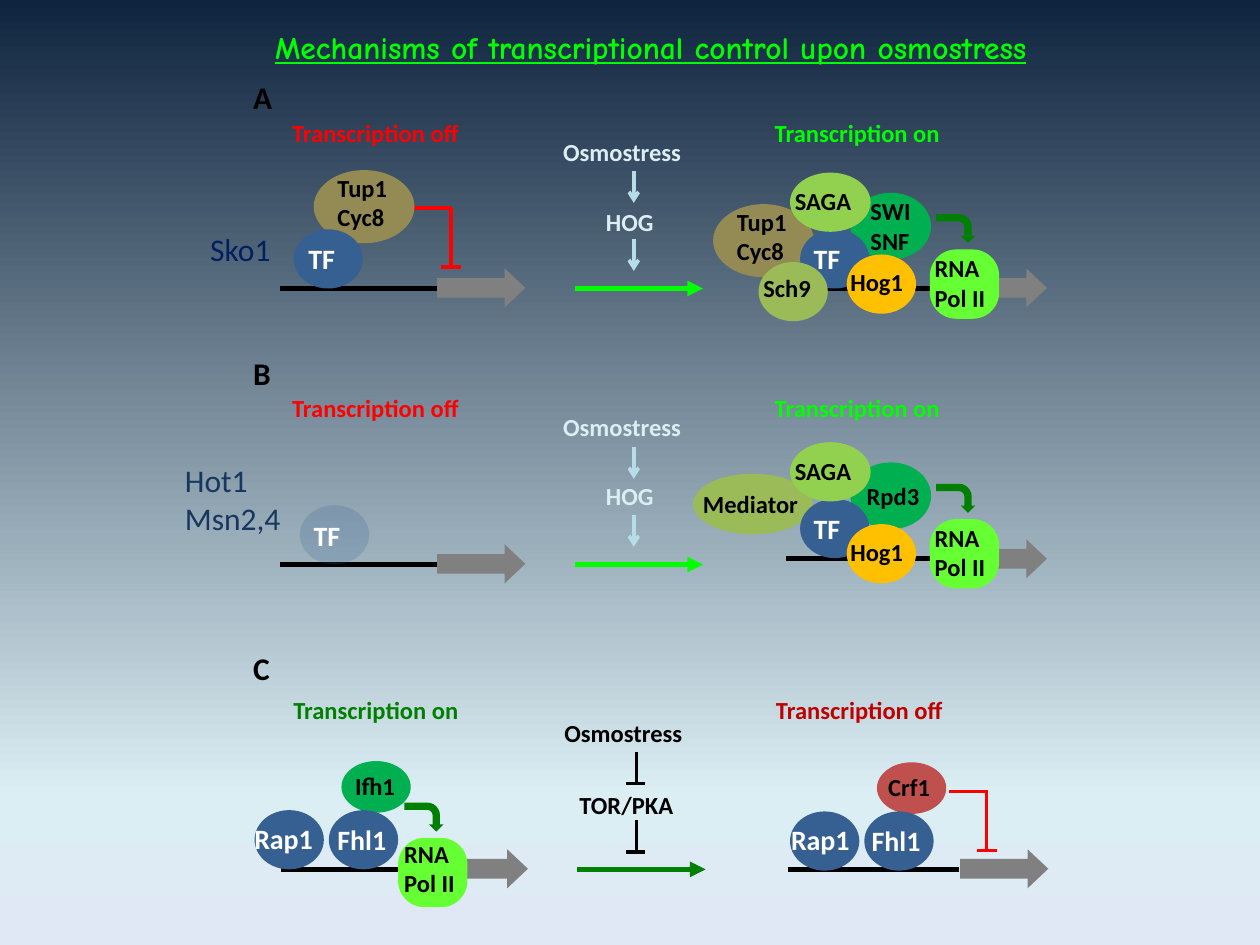
import copy

import pptx
import pptx.dml.color
import pptx.enum.shapes
import pptx.enum.text
import pptx.oxml
import pptx.oxml.ns
import pptx.util

Inches = pptx.util.Inches
rgb = pptx.dml.color.RGBColor.from_string
Shape = pptx.enum.shapes.MSO_SHAPE

deck = pptx.Presentation()
deck.slide_width, deck.slide_height = Inches(10), Inches(7.5)
slide = deck.slides.add_slide(deck.slide_layouts[6])

backdrop = slide.background.fill
backdrop.gradient()
backdrop.gradient_angle = 270
stops = slide.element.find(".//" + pptx.oxml.ns.qn("a:gsLst"))
stops.append(copy.deepcopy(stops[-1]))
for stop, (position, color) in zip(
    backdrop.gradient_stops, [(0, "0F243E"), (0.84, "DBEEF4"), (1, "E1E8F5")]
):
    stop.position = position
    stop.color.rgb = rgb(color)


def draw_line(shapes, x1, y1, x2, y2, color, width, head=None):
    line = shapes.add_connector(
        pptx.enum.shapes.MSO_CONNECTOR.STRAIGHT, Inches(x1), Inches(y1), Inches(x2), Inches(y2)
    )
    line.line.color.rgb = rgb(color)
    line.line.width = pptx.util.Pt(width)
    if head:
        outline = line.line._get_or_add_ln()
        pptx.oxml.ns.qn("a:tailEnd")
        outline.append(pptx.oxml.parse_xml(
            f'<a:tailEnd {pptx.oxml.ns.nsdecls("a")} type="{head}"/>'
        ))
    line._element.spPr.append(
        pptx.oxml.parse_xml(f'<a:effectLst {pptx.oxml.ns.nsdecls("a")}/>')
    )


def draw_shape(kind, x, y, width, height, color):
    shape = slide.shapes.add_shape(kind, Inches(x), Inches(y), Inches(width), Inches(height))
    shape.fill.solid()
    shape.fill.fore_color.rgb = rgb(color)
    shape.line.fill.background()
    shape.shadow.inherit = False
    return shape


# (start, end, y) of each stretch of DNA, then (x, y) of each gene
for start, end, y in [
    (2.22, 3.47, 2.29), (6.24, 7.49, 2.29), (2.22, 3.47, 4.48),
    (6.24, 7.49, 4.43), (2.23, 3.48, 6.9), (6.25, 7.61, 6.9),
]:
    draw_line(slide.shapes, start, y, end, y, "000000", 3)
for x, y in [(3.47, 2.13), (7.61, 2.13), (3.47, 4.32), (7.61, 4.28), (3.49, 6.74), (7.62, 6.74)]:
    gene = draw_shape(Shape.RIGHT_ARROW, x, y, 0.7, 0.31, "808080")
    gene.adjustments[1] = 0.53

for start, y, color in [(4.56, 2.29, "00FF00"), (4.56, 4.48, "00FF00"), (4.58, 6.9, "008000")]:
    draw_line(slide.shapes, start, y, start + 1.02, y, color, 3, "triangle")
for y in (1.36, 1.9, 3.55, 4.09):
    draw_line(slide.shapes, 5.03, y, 5.03, y + 0.25, "B7DEE8", 2, "arrow")
for y in (5.97, 6.51):
    draw_line(slide.shapes, 5.05, y, 5.05, y + 0.25, "000000", 2)
    draw_line(slide.shapes, 4.97, y + 0.25, 5.12, y + 0.25, "000000", 2)
for x, y in [(3.28, 1.65), (7.53, 6.28)]:
    repression = slide.shapes.add_group_shape().shapes
    draw_line(repression, x, y, x + 0.31, y, "FF0000", 2)
    draw_line(repression, x + 0.3, y, x + 0.3, y + 0.47, "FF0000", 2)
    draw_line(repression, x + 0.22, y + 0.47, x + 0.38, y + 0.47, "FF0000", 2)

proteins = [
    (2.49, 1.35, 0.8, 0.58, "948A54"), (2.33, 1.82, 0.55, 0.47, "376092"),
    (2.71, 6.04, 0.55, 0.41, "00B050"), (6.96, 6.05, 0.55, 0.41, "C0504D"),
]
for x, y in [(2.61, 6.43), (2.02, 6.43), (6.86, 6.44), (6.27, 6.44)]:
    proteins.append((x, y, 0.55, 0.47, "376092"))
for y, side_protein in [
    (1.37, (5.66, 1.62, 0.8, 0.58, "948A54")), (3.51, (5.5, 3.76, 0.95, 0.48, "9BBB59"))
]:
    proteins += [
        (6.75, y + 0.16, 0.64, 0.53, "00B050"),
        side_protein,
        (6.35, y + 0.45, 0.55, 0.47, "376092"),
        (6.27, y, 0.64, 0.47, "92D050"),
        (6.72, y + 0.65, 0.55, 0.47, "FFC000"),
    ]
proteins.append((6.02, 2.08, 0.55, 0.47, "9BBB59"))
for protein in proteins:
    draw_shape(Shape.OVAL, *protein)

unbound_factor = draw_shape(Shape.OVAL, 2.38, 4.01, 0.55, 0.47, "376092")
tint = unbound_factor._element.spPr.find(".//" + pptx.oxml.ns.qn("a:srgbClr"))
tint.append(pptx.oxml.parse_xml(f'<a:alpha {pptx.oxml.ns.nsdecls("a")} val="21000"/>'))

for x, y in [(7.38, 1.98), (7.38, 4.12), (3.16, 6.65)]:
    polymerase = draw_shape(Shape.ROUNDED_RECTANGLE, x, y, 0.55, 0.55, "66FF33")
    polymerase.adjustments[0] = 0.38
    activation = draw_shape(Shape.BENT_ARROW, x + 0.09, y - 0.32, 0.23, 0.31, "008000")
    activation.rotation = 90

labels = [
    ("Tup1\nCyc8", 2.58, 1.32, 0.67, 14, "000000"),
    ("Tup1\nCyc8", 5.75, 1.59, 0.67, 14, "000000"),
    ("SWI\nSNF", 6.81, 1.51, 0.59, 14, "000000"),
    ("Sch9", 5.96, 2.12, 0.67, 14, "000000"),
    ("Rpd3", 6.78, 3.77, 0.69, 14, "000000"),
    ("Mediator", 5.48, 3.83, 1.01, 14, "000000"),
    ("Ifh1", 2.72, 6.07, 0.55, 14, "000000"),
    ("Crf1", 6.95, 6.08, 0.59, 14, "000000"),
    ("RNA\nPol II", 3.11, 6.61, 0.67, 14, "000000"),
    ("TF", 2.35, 1.87, 0.47, 16, "FFFFFF"),
    ("TF", 2.39, 4.07, 0.47, 16, "FFFFFF"),
    ("Fhl1", 2.58, 6.48, 0.66, 16, "FFFFFF"),
    ("Rap1", 1.92, 6.47, 0.74, 16, "FFFFFF"),
    ("Fhl1", 6.82, 6.49, 0.66, 16, "FFFFFF"),
    ("Rap1", 6.18, 6.48, 0.74, 16, "FFFFFF"),
    ("Osmostress", 4.38, 5.65, 1.32, 14, "000000"),
    ("TOR/PKA", 4.5, 6.22, 1.08, 14, "000000"),
    ("Transcription on", 2.23, 5.47, 1.74, 14, "008000"),
    ("Transcription off", 6.06, 5.47, 1.75, 14, "C00000"),
    ("A", 1.91, 0.57, 0.38, 18, "000000"),
    ("B", 1.91, 2.76, 0.38, 18, "000000"),
    ("C", 1.91, 5.1, 0.38, 18, "000000"),
    ("Sko1", 1.57, 1.78, 0.69, 18, "002060"),
    ("Hot1\nMsn2,4", 1.37, 3.61, 0.96, 18, "17375E"),
    ("Mechanisms of transcriptional control upon osmostress", 1.75, 0.17, 6.83, 18, "00FF00"),
]
for y in (0.89, 3.07):
    labels += [
        ("Transcription off", 2.22, y, 1.54, 14, "FF0000"),
        ("Transcription on", 6.05, y, 1.52, 14, "00FF00"),
        ("Osmostress", 4.37, y + 0.15, 1.15, 14, "DBEEF4"),
        ("HOG", 4.71, y + 0.7, 0.58, 14, "DBEEF4"),
    ]
for y in (1.43, 3.57):
    labels += [
        ("SAGA", 6.21, y, 0.76, 14, "000000"),
        ("TF", 6.36, y + 0.44, 0.47, 16, "FFFFFF"),
        ("Hog1", 6.65, y + 0.64, 0.69, 14, "000000"),
        ("RNA\nPol II", 7.32, y + 0.53, 0.67, 14, "000000"),
    ]

line_heights = {14: 0.24, 16: 0.27, 18: 0.3}
for words, x, y, width, size, color in labels:
    height = 0.1 + line_heights[size] * (words.count("\n") + 1)
    label = slide.shapes.add_textbox(Inches(x), Inches(y), Inches(width), Inches(height))
    frame = label.text_frame
    frame.text = words
    frame.word_wrap = False
    frame.auto_size = pptx.enum.text.MSO_AUTO_SIZE.SHAPE_TO_FIT_TEXT
    is_title = words.startswith("Mechanisms")
    for paragraph in frame.paragraphs:
        if is_title:
            paragraph.alignment = pptx.enum.text.PP_ALIGN.CENTER
        font = paragraph.runs[0].font
        font.name = "Comic Neue" if is_title else "Calibri"
        font.size = pptx.util.Pt(size)
        font.bold = not words.startswith(("Sko1", "Hot1"))
        font.underline = is_title
        font.color.rgb = rgb(color)

deck.save("out.pptx")
